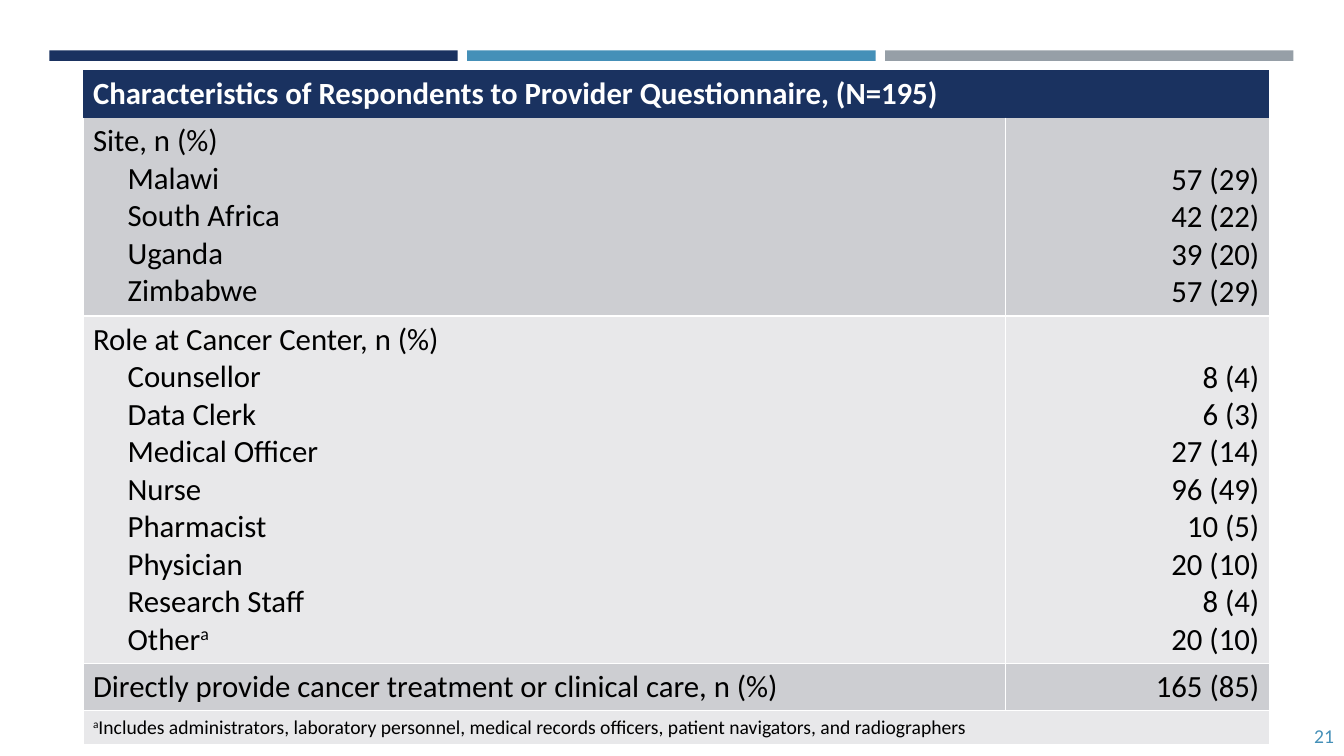
from dataclasses import dataclass

from lxml.etree import fromstring
from pptx import Presentation
from pptx.dml.color import RGBColor
from pptx.enum.shapes import MSO_SHAPE
from pptx.enum.text import MSO_ANCHOR, PP_ALIGN
from pptx.util import Pt

EMU_PER_PX = 9525
DRAWING = "http://schemas.openxmlformats.org/drawingml/2006/main"
PLAIN_TABLE_STYLE = "{2D5ABB26-0587-4C30-8999-92F81FD0307C}"


@dataclass(frozen=True)
class Theme:
    font: str = "Calibri"
    navy: str = "1A3260"
    blue: str = "4590B8"
    gray: str = "969FA7"
    dark_band: str = "CDCED2"
    light_band: str = "E8E8EA"
    white: str = "FFFFFF"
    black: str = "000000"
    table_size: int = 22
    small_size: int = 14


THEME = Theme()

SITES = [("Malawi", "57 (29)"), ("South Africa", "42 (22)"),
         ("Uganda", "39 (20)"), ("Zimbabwe", "57 (29)")]
ROLES = [("Counsellor", "8 (4)"), ("Data Clerk", "6 (3)"),
         ("Medical Officer", "27 (14)"), ("Nurse", "96 (49)"),
         ("Pharmacist", "10 (5)"), ("Physician", "20 (10)"),
         ("Research Staff", "8 (4)"), ("Other", "20 (10)")]
GROUPS = [("Site, n (%)", SITES, THEME.dark_band),
          ("Role at Cancer Center, n (%)", ROLES, THEME.light_band)]
COLUMN_WIDTHS = [879, 251]
ROW_HEIGHTS = [45, 189, 331, 45, 31]


def px(length):
    return length * EMU_PER_PX


def set_format(target, values):
    for name, value in values.items():
        setattr(target, name, value)


def add_span(para, text, size=THEME.table_size, color=THEME.black,
             bold=False, raised=False):
    span = para.add_run()
    span.text = text
    set_format(span.font, {"name": THEME.font, "size": Pt(size), "bold": bold})
    span.font.color.rgb = RGBColor.from_string(color)
    if raised:
        span.font._element.set("baseline", "30000")
    return span


def next_para(frame, align=PP_ALIGN.LEFT, indent=0):
    first = frame.paragraphs[0]
    para = frame.add_paragraph() if first.runs else first
    para.alignment = align
    if indent:
        para._p.get_or_add_pPr().set("marL", str(px(indent)))
    return para


def add_bar(page, left, color):
    bar = page.shapes.add_shape(MSO_SHAPE.RECTANGLE, px(left), px(48), px(389), px(10))
    bar.shadow.inherit = False
    bar.fill.solid()
    bar.fill.fore_color.rgb = RGBColor.from_string(color)
    bar.line.fill.background()


def add_page_number(page, number):
    box = page.shapes.add_textbox(px(1169), px(682), px(111), px(38))
    set_format(box.text_frame, {"word_wrap": True, "vertical_anchor": MSO_ANCHOR.MIDDLE})
    para = next_para(box.text_frame, PP_ALIGN.RIGHT)
    para.space_after = Pt(6)
    add_span(para, number, THEME.small_size, THEME.blue)


def fill_cell(cell, color):
    cell.fill.solid()
    cell.fill.fore_color.rgb = RGBColor.from_string(color)


def border_cell(cell, sides):
    properties = cell._tc.get_or_add_tcPr()
    for position, side in enumerate(sides):
        line = fromstring(
            f'<a:ln{side} xmlns:a="{DRAWING}" w="12700"><a:solidFill>'
            f'<a:srgbClr val="{THEME.white}"/></a:solidFill></a:ln{side}>')
        properties.insert(position, line)


def write_group(label_cell, value_cell, heading, entries):
    add_span(next_para(label_cell.text_frame), heading)
    value_cell.vertical_anchor = MSO_ANCHOR.BOTTOM
    for label, value in entries:
        para = next_para(label_cell.text_frame, indent=33)
        add_span(para, label)
        if label == "Other":
            add_span(para, "a", raised=True)
        add_span(next_para(value_cell.text_frame, PP_ALIGN.RIGHT), value)


def add_respondent_table(page):
    frame = page.shapes.add_table(len(ROW_HEIGHTS), len(COLUMN_WIDTHS), px(79), px(67),
                                  px(sum(COLUMN_WIDTHS)), px(sum(ROW_HEIGHTS)))
    table = frame.table
    set_format(table, {"first_row": False, "horz_banding": False})
    table._tbl.tblPr.find(f"{{{DRAWING}}}tableStyleId").text = PLAIN_TABLE_STYLE
    for column, width in zip(table.columns, COLUMN_WIDTHS):
        column.width = px(width)
    for row, height in zip(table.rows, ROW_HEIGHTS):
        row.height = px(height)

    bands = [THEME.navy, *(color for _, _, color in GROUPS),
             THEME.dark_band, THEME.light_band]
    for index, (row, color) in enumerate(zip(table.rows, bands)):
        for cell in row.cells:
            fill_cell(cell, color)
            if index:
                border_cell(cell, "LRB" if index == 1 else "LRTB")
    for index in (0, len(ROW_HEIGHTS) - 1):
        table.cell(index, 0).merge(table.cell(index, 1))

    add_span(next_para(table.cell(0, 0).text_frame),
             "Characteristics of Respondents to Provider Questionnaire, (N=195)",
             color=THEME.white, bold=True)
    for index, (heading, entries, _) in enumerate(GROUPS, start=1):
        write_group(table.cell(index, 0), table.cell(index, 1), heading, entries)
    add_span(next_para(table.cell(3, 0).text_frame),
             "Directly provide cancer treatment or clinical care, n (%)")
    add_span(next_para(table.cell(3, 1).text_frame, PP_ALIGN.RIGHT), "165 (85)")
    footnote = next_para(table.cell(4, 0).text_frame)
    add_span(footnote, "a", THEME.small_size, raised=True)
    add_span(footnote, "Includes administrators, laboratory personnel, medical records "
             "officers, patient navigators, and radiographers", THEME.small_size)


def main():
    deck = Presentation()
    set_format(deck, {"slide_width": px(1280), "slide_height": px(720)})
    page = deck.slides.add_slide(deck.slide_layouts[6])
    for index, color in enumerate([THEME.navy, THEME.blue, THEME.gray]):
        add_bar(page, 47 + 398 * index, color)
    add_page_number(page, "21")
    add_respondent_table(page)
    deck.save("out.pptx")


if __name__ == "__main__":
    main()
